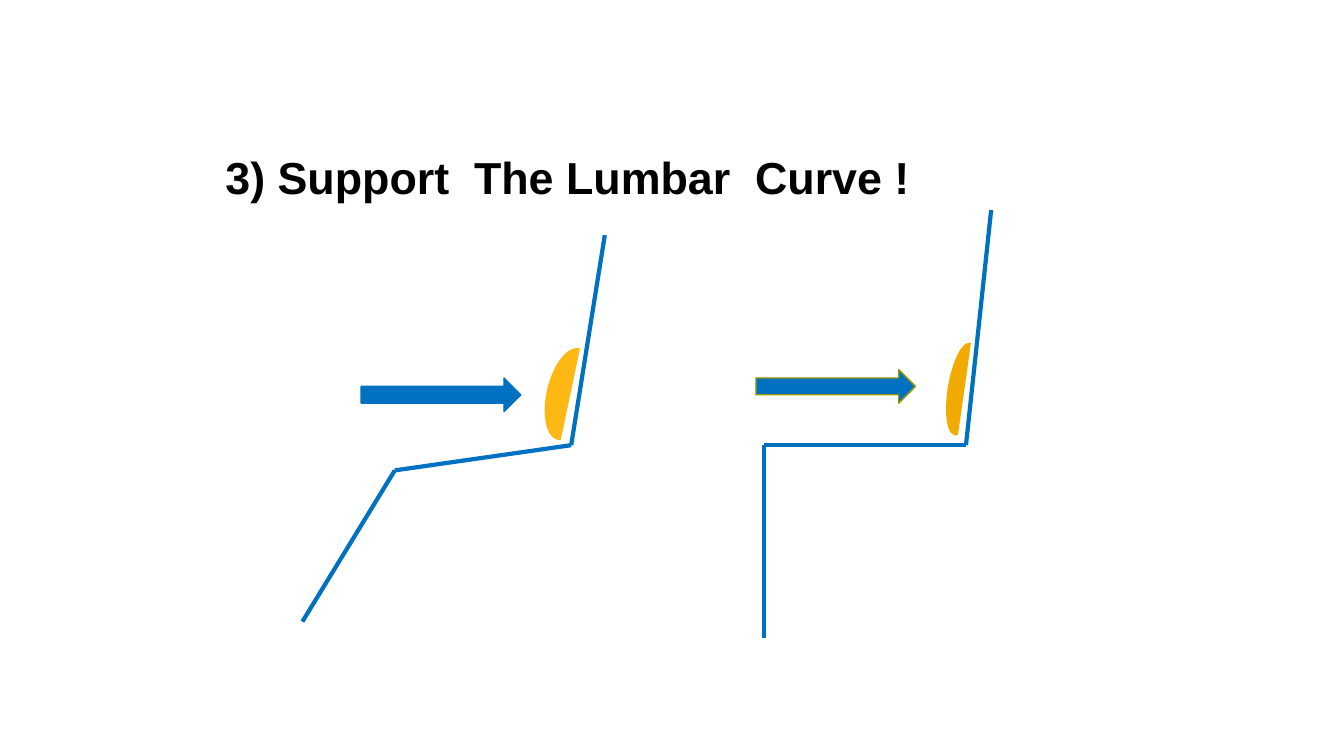
from dataclasses import dataclass
from itertools import pairwise

from lxml.etree import SubElement
from pptx import Presentation
from pptx.dml.color import RGBColor
from pptx.enum.shapes import MSO_CONNECTOR as Connector, MSO_SHAPE as Shape
from pptx.enum.text import MSO_ANCHOR as Anchor
from pptx.oxml.ns import qn
from pptx.util import Pt


@dataclass(frozen=True)
class Theme:
    font: str = "Arial"
    title_size: int = 32
    ink: str = "000000"
    blue: str = "0070C0"
    olive: str = "979700"
    yellow: str = "FDB813"
    amber: str = "F1AB00"
    seat_width: int = 3
    outline_width: int = 1


@dataclass(frozen=True)
class Posture:
    """Joints run from foot to head; all places are relative to the box."""
    box: tuple
    joints: tuple
    cushion: tuple
    tilt: float
    cushion_color: str
    arrow: tuple
    arrow_outline: str


THEME = Theme()
POSTURES = (
    Posture((216, 168), ((0, 276), (66, 168), (192, 150), (216, 0)),
            (175, 80.4, 30.2, 66.2), 13.3, THEME.yellow,
            (42, 102, 114, 24), THEME.blue),
    Posture((540, 150), ((6, 306), (6, 168), (150, 168), (168, 0)),
            (137.5, 94.8, 20.2, 66.2), 9.4, THEME.amber,
            (0, 114, 114, 24), THEME.olive),
)


def add_title(slide, left, top, width, height):
    frame = slide.shapes.add_textbox(Pt(left), Pt(top), Pt(width), Pt(height)).text_frame
    frame.word_wrap = True
    frame.vertical_anchor = Anchor.BOTTOM
    frame.margin_left = Pt(77)
    frame.margin_bottom = Pt(4.4)
    heading = frame.paragraphs[0].add_run()
    heading.text = "3) Support  The Lumbar  Curve !"
    heading.font.name = THEME.font
    heading.font.size = Pt(THEME.title_size)
    heading.font.bold = True
    heading.font.color.rgb = RGBColor.from_string(THEME.ink)


def add_filled(slide, preset, box, place, fill, outline):
    x, y, width, height = place
    shape = slide.shapes.add_shape(
        preset, Pt(box[0] + x), Pt(box[1] + y), Pt(width), Pt(height))
    shape.shadow.inherit = False
    shape.fill.solid()
    shape.fill.fore_color.rgb = RGBColor.from_string(fill)
    shape.line.color.rgb = RGBColor.from_string(outline)
    shape.line.width = Pt(THEME.outline_width)
    return shape


def add_posture(slide, posture):
    """Draw the seat line, the lumbar cushion and the arrow pointing at it."""
    left, top = posture.box
    for (x1, y1), (x2, y2) in pairwise(posture.joints):
        segment = slide.shapes.add_connector(
            Connector.STRAIGHT, Pt(left + x1), Pt(top + y1), Pt(left + x2), Pt(top + y2))
        segment.line.color.rgb = RGBColor.from_string(THEME.blue)
        segment.line.width = Pt(THEME.seat_width)
        SubElement(segment._element.spPr, qn("a:effectLst"))

    cushion = add_filled(slide, Shape.CHORD, posture.box, posture.cushion,
                         posture.cushion_color, posture.cushion_color)
    cushion.adjustments[0] = 52.3
    cushion.rotation = posture.tilt
    add_filled(slide, Shape.RIGHT_ARROW, posture.box, posture.arrow,
               THEME.blue, posture.arrow_outline)


def main():
    deck = Presentation()
    deck.slide_width, deck.slide_height = Pt(960), Pt(540)
    slide = deck.slides.add_slide(deck.slide_layouts[6])
    add_title(slide, 84, 60, 832, 90)
    for posture in POSTURES:
        add_posture(slide, posture)
    deck.save("out.pptx")


if __name__ == "__main__":
    main()
